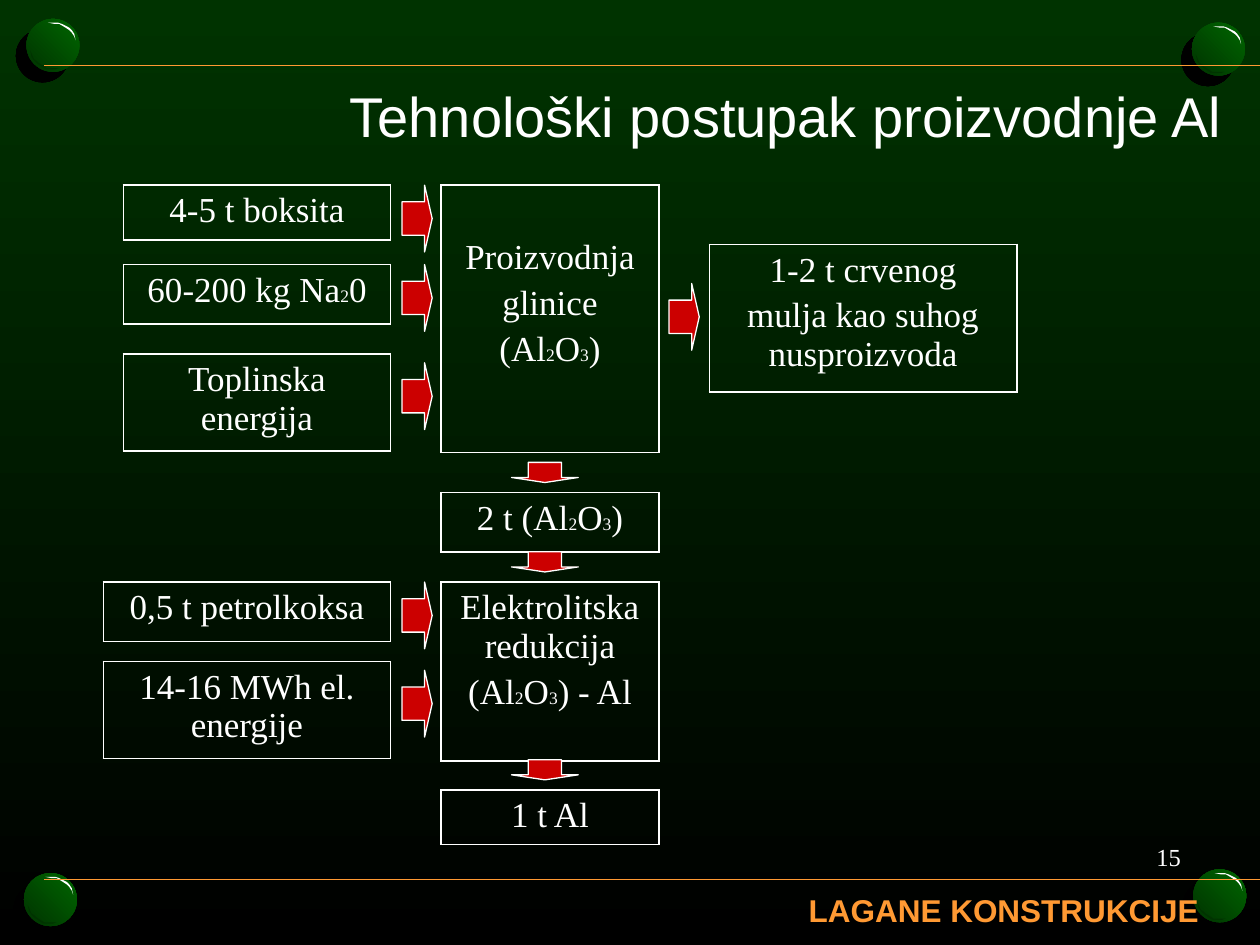
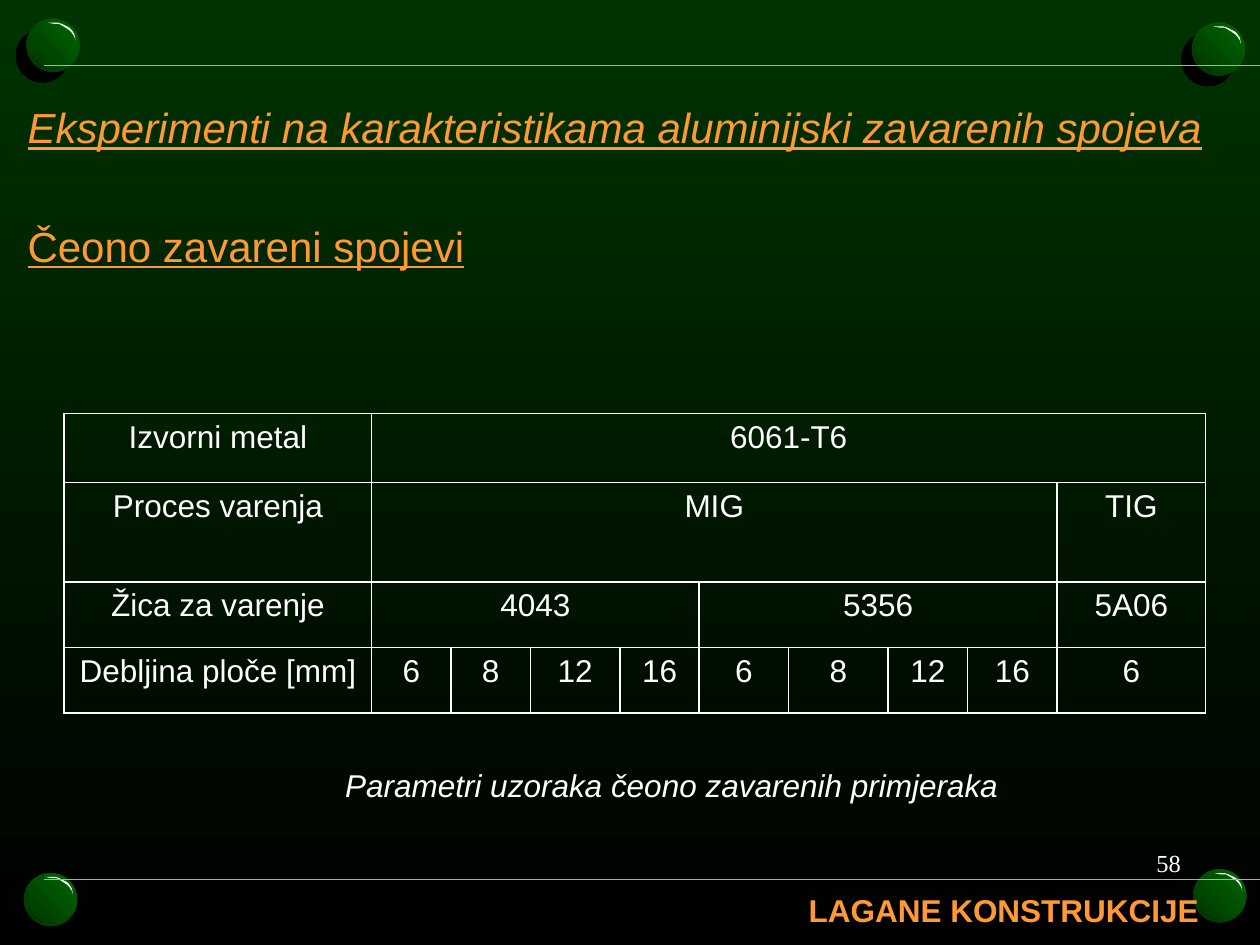
"""Two lecture slides on aluminium: production flow and welding test table."""
from lxml import etree
from pptx import Presentation, util as u
from pptx.dml.color import RGBColor
from pptx.enum import shapes, text
from pptx.oxml.ns import qn

ORANGE = RGBColor(0xFF, 0x99, 0x33)
WHITE = RGBColor(0xFF, 0xFF, 0xFF)
BLACK = RGBColor(0, 0, 0)
RED = RGBColor(0xCC, 0, 0)
DARK = RGBColor(0, 0x33, 0)
GREEN = RGBColor(0, 0x66, 0)
SANS, SERIF = "Arial", "Times New Roman"
LEFT, MID, RIGHT = text.PP_ALIGN.LEFT, text.PP_ALIGN.CENTER, text.PP_ALIGN.RIGHT

FOOTER = "LAGANE KONSTRUKCIJE"
RULES = (0.52, 6.98)
BALL = 42
BALLS = [(21, 15), (946, 18), (947, 690), (19, 693)]
SHINE = [(17, 3), (25, 3), (28, 4), (30, 5), (34, 7), (36, 9), (38, 12), (39, 17),
         (38, 14), (36, 11), (34, 9), (31, 7), (26, 4), (22, 4)]
SHADE = [(26, 39), (20, 39), (16, 39), (13, 37), (10, 35), (8, 33), (6, 32), (3, 25),
         (4, 30), (6, 33), (8, 35), (12, 38), (15, 40), (19, 40), (23, 40)]

TITLE = "Tehnološki postupak proizvodnje Al"
INPUTS = [
    (1.47, 2.12, 0.43, "4-5 t boksita", 1.47),
    (2.1, 2.12, 0.47, "60-200 kg Na_20", 2.1),
    (2.81, 2.12, 0.77, "Toplinska energija", 2.88),
    (4.62, 2.28, 0.47, "0,5 t petrolkoksa", 4.62),
    (5.25, 2.28, 0.77, "14-16 MWh el. energije", 5.32),
]
STEPS = [
    (1.47, 2.12, ["Proizvodnja", "glinice", "(Al_2O_3)"], 0.42, 3.67),
    (3.91, 0.47, ["2 t (Al_2O_3)"], 0.05, 4.38),
    (4.62, 1.42, ["Elektrolitska redukcija", "(Al_2O_3) - Al"], 0.05, 6.03),
    (6.27, 0.43, ["1 t Al"], 0.05, None),
]
WASTE = ["1-2 t crvenog", "mulja kao suhog nusproizvoda"]
EDGE, CORE, WIDE = 3.1, 3.5, 1.73

TOPIC = "Eksperimenti na karakteristikama aluminijski zavarenih spojeva"
KIND = "Čeono zavareni spojevi"
NOTE = "Parametri uzoraka čeono zavarenih primjeraka"
COLS = [2.44, 0.63, 0.63, 0.71, 0.63, 0.71, 0.79, 0.63, 0.71, 1.18]
ROWS = [0.55, 0.79, 0.52, 0.52]
GRID = [
    [("Izvorni metal", 1), ("6061-T6", 9)],
    [("Proces varenja", 1), ("MIG", 8), ("TIG", 1)],
    [("Žica za varenje", 1), ("4043", 4), ("5356", 4), ("5A06", 1)],
    [(s, 1) for s in ["Debljina ploče [mm]"] + ["6", "8", "12", "16"] * 2 + ["6"]],
]


def box(*at):
    return [u.Inches(n) for n in at]


def blend(fill, first, last, angle):
    fill.gradient()
    fill.gradient_angle = angle
    for stop, color in zip(fill.gradient_stops, (first, last)):
        stop.color.rgb = color


def write(frame, lines, size, font, color=WHITE, align=LEFT, gap=4, **style):
    frame.text = "\n".join(lines)
    for i, (para, line) in enumerate(zip(frame.paragraphs, lines)):
        para.text = ""
        para.alignment = align
        if i:
            para.space_before = u.Pt(gap)
        head, *subs = line.split("_")
        parts = [(head, size)]
        for sub in subs:
            parts += [(sub[0], size / 2), (sub[1:], size)]
        for part, pts in parts:
            if part:
                run = para.add_run()
                run.text = part
                run.font.size, run.font.name = u.Pt(pts), font
                run.font.color.rgb = color
                for key, val in style.items():
                    setattr(run.font, key, val)


def label(slide, at, lines, size, font, wrap=True, **style):
    frame = slide.shapes.add_textbox(*box(*at)).text_frame
    frame.word_wrap = wrap
    write(frame, lines, size, font, **style)
    return frame


def ball(slide, x, y):
    group = slide.shapes.add_group_shape().shapes
    disc = group.add_shape(shapes.MSO_SHAPE.OVAL,
                           *box(x / 100, y / 100, BALL / 100, BALL / 100))
    blend(disc.fill, DARK, GREEN, 45)
    disc.line.fill.background()
    disc.shadow.inherit = False
    effects = disc._element.spPr.find(qn("a:effectLst"))
    shadow = etree.SubElement(effects, qn("a:outerShdw"), dist=str(u.Pt(8.5)),
                              dir="8100000", algn="ctr", rotWithShape="0")
    etree.SubElement(shadow, qn("a:srgbClr"), val=str(BLACK))
    for points, color in ((SHINE, WHITE), (SHADE, DARK)):
        spots = [(x + a, y + b) for a, b in points]
        path = group.build_freeform(*spots[0], scale=9144)
        path.add_line_segments(spots[1:], close=True)
        mark = path.convert_to_shape()
        mark.fill.solid()
        mark.fill.fore_color.rgb = color
        mark.line.fill.background()
        mark.shadow.inherit = False


def base(deck, number, top):
    slide = deck.slides.add_slide(deck.slide_layouts[6])
    blend(slide.background.fill, DARK, BLACK, 270)
    for x, y in BALLS:
        ball(slide, x, y)
    for y in RULES:
        rule = slide.shapes.add_connector(shapes.MSO_CONNECTOR.STRAIGHT,
                                          *box(10, y, 0.35, y))
        rule.line.color.rgb, rule.line.width = ORANGE, u.Pt(0.75)
        etree.SubElement(rule._element.spPr, qn("a:effectLst"))
    label(slide, (6.32, 7.02, 3.3, 0.4), [FOOTER], 18, SANS, wrap=False,
          color=ORANGE, bold=True)
    frame = label(slide, (7.28, top, 2.19, 0.5), [number], 14, SERIF, align=RIGHT)
    frame.vertical_anchor = text.MSO_ANCHOR.MIDDLE
    return slide


def table(slide, x, y, cols, rows):
    grid = slide.shapes.add_table(len(rows), len(cols),
                                  *box(x, y, sum(cols), sum(rows))).table
    grid.first_row = grid.horz_banding = False
    for col, wide in zip(grid.columns, cols):
        col.width = u.Inches(wide)
    for row, high in zip(grid.rows, rows):
        row.height = u.Inches(high)
    for cell in grid.iter_cells():
        cell.fill.background()
        props = cell._tc.get_or_add_tcPr()
        for i, side in enumerate("LRTB"):
            line = etree.Element(qn("a:ln" + side), w=str(u.Pt(1)))
            fill = etree.SubElement(line, qn("a:solidFill"))
            etree.SubElement(fill, qn("a:srgbClr"), val=str(WHITE))
            props.insert(i, line)
    return grid


def block(slide, x, y, wide, high, lines, pad=0.05):
    cell = table(slide, x, y, [wide], [high]).cell(0, 0)
    cell.margin_top = u.Inches(pad)
    write(cell.text_frame, lines, 20, SERIF, align=MID)


def arrow(slide, x, y, down=False):
    kind = shapes.MSO_SHAPE.DOWN_ARROW if down else shapes.MSO_SHAPE.RIGHT_ARROW
    size = (0.53, 0.16) if down else (0.24, 0.53)
    item = slide.shapes.add_shape(kind, *box(x, y, *size))
    item.adjustments[0], item.adjustments[1] = 0.5, 0.25
    item.fill.solid()
    item.fill.fore_color.rgb = RED
    item.line.color.rgb, item.line.width = WHITE, u.Pt(0.75)
    item.shadow.inherit = False


def flow(deck):
    slide = base(deck, "15", 6.55)
    label(slide, (2.32, 0.6, 7.48, 0.63), [TITLE], 32, SANS, align=RIGHT)
    for y, wide, high, line, tip in INPUTS:
        block(slide, EDGE - wide, y, wide, high, [line])
        arrow(slide, EDGE + 0.09, tip)
    for y, high, lines, pad, tip in STEPS:
        block(slide, CORE, y, WIDE, high, lines, pad)
        if tip:
            arrow(slide, CORE + 0.56, tip, down=True)
    arrow(slide, CORE + WIDE + 0.08, 2.25)
    block(slide, 5.63, 1.94, 2.44, 1.17, WASTE)


def weld(deck):
    slide = base(deck, "58", 6.6)
    frame = label(slide, (0.12, 0.76, 10.15, 3.31), [TOPIC, KIND], 24, SANS,
                  color=ORANGE, gap=39, underline=True)
    frame.paragraphs[0].runs[0].font.italic = True
    grid = table(slide, 0.51, 3.28, COLS, ROWS)
    for r, row in enumerate(GRID):
        c = 0
        for words, span in row:
            cell = grid.cell(r, c)
            if span > 1:
                cell.merge(grid.cell(r, c + span - 1))
            write(cell.text_frame, [words], 18, SANS, align=MID)
            c += span
    label(slide, (2.64, 6.03, 5.51, 0.4), [NOTE], 18, SANS, italic=True)


def main():
    deck = Presentation()
    deck.slide_width, deck.slide_height = box(10, 7.5)
    flow(deck)
    weld(deck)
    deck.save("out.pptx")


if __name__ == "__main__":
    main()
